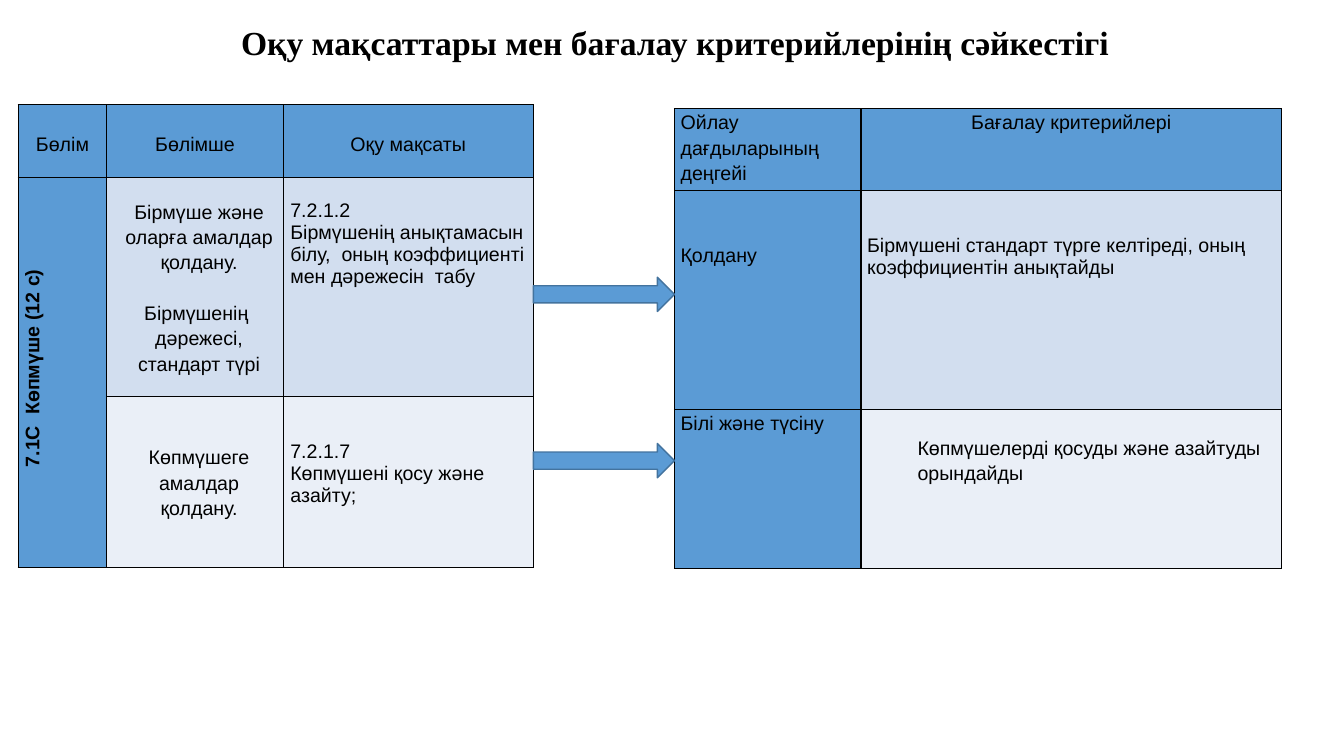
from dataclasses import dataclass

from lxml import etree
from pptx import Presentation
from pptx.dml.color import RGBColor
from pptx.enum.shapes import MSO_SHAPE
from pptx.enum.text import MSO_ANCHOR, PP_ALIGN
from pptx.oxml.ns import qn
from pptx.util import Inches, Pt

RIGHT_ARROW = MSO_SHAPE.RIGHT_ARROW
LEFT, CENTER = PP_ALIGN.LEFT, PP_ALIGN.CENTER
TOP, MIDDLE = MSO_ANCHOR.TOP, MSO_ANCHOR.MIDDLE


@dataclass(frozen=True)
class Theme:
    ink: str = "000000"
    accent: str = "5B9BD5"
    accent_edge: str = "43739E"
    band_dark: str = "D2DEEF"
    band_light: str = "EAEFF7"
    title_font: str = "Times New Roman"
    body_font: str = "Arial"
    title_size: int = 24
    body_size: int = 14
    line_width: int = 1


THEME = Theme()


def write(frame, text, font=THEME.body_font, size=THEME.body_size, bold=False,
          align=LEFT, spacing=1.0, gap=0, indent=0):
    """Fill a text frame, one paragraph per line; gap is the points between them."""
    frame.word_wrap = True
    for index, line in enumerate(text.split("\n")):
        paragraph = frame.paragraphs[0] if index == 0 else frame.add_paragraph()
        paragraph.alignment = align
        paragraph.line_spacing = spacing
        paragraph.space_before = Pt(gap if index else 0)
        if indent:
            properties = paragraph._p.get_or_add_pPr()
            properties.set("marL", str(Inches(indent)))
            properties.set("indent", "0")
        run = paragraph.add_run()
        run.text = line
        run.font.name = font
        run.font.size = Pt(size)
        run.font.bold = bold
        run.font.color.rgb = RGBColor.from_string(THEME.ink)


class SlideBuilder:
    def __init__(self, slide, theme):
        self.slide = slide
        self.theme = theme

    def title(self, text, left, top, width, height):
        box = self.slide.shapes.add_textbox(*map(Inches, (left, top, width, height)))
        box.text_frame.vertical_anchor = MIDDLE
        write(box.text_frame, text, font=self.theme.title_font,
              size=self.theme.title_size, bold=True, align=CENTER, spacing=0.9)

    def table(self, left, top, widths, heights, inset):
        """Add an unstyled bordered table with accent headings and banded rows."""
        frame = self.slide.shapes.add_table(
            len(heights), len(widths), Inches(left), Inches(top),
            Inches(sum(widths)), Inches(sum(heights)))
        grid = frame.table
        grid.first_row = grid.horz_banding = False
        for column, width in zip(grid.columns, widths):
            column.width = Inches(width)
        bands = (self.theme.accent, self.theme.band_dark, self.theme.band_light)
        for row, (height, band) in enumerate(zip(heights, bands)):
            grid.rows[row].height = Inches(height)
            for column in range(len(widths)):
                cell = grid.cell(row, column)
                cell.margin_left = cell.margin_right = Inches(inset)
                cell.margin_top = cell.margin_bottom = 0
                cell.fill.solid()
                cell.fill.fore_color.rgb = RGBColor.from_string(
                    band if column else self.theme.accent)
                self.border(cell)
        return grid

    def border(self, cell):
        properties = cell._tc.get_or_add_tcPr()
        for position, side in enumerate(("a:lnL", "a:lnR", "a:lnT", "a:lnB")):
            line = etree.Element(qn(side), w=str(Pt(self.theme.line_width)))
            fill = etree.SubElement(line, qn("a:solidFill"))
            etree.SubElement(fill, qn("a:srgbClr"), val=self.theme.ink)
            properties.insert(position, line)

    def cell(self, grid, row, column, text, drop=0, anchor=TOP, **text_format):
        """Write a cell; drop is the space in inches above its text."""
        cell = grid.cell(row, column)
        cell.margin_top = Inches(drop)
        cell.vertical_anchor = anchor
        write(cell.text_frame, text, **text_format)
        return cell

    def arrow(self, left, top, width, height):
        arrow = self.slide.shapes.add_shape(
            RIGHT_ARROW, *map(Inches, (left, top, width, height)))
        arrow.shadow.inherit = False
        arrow.fill.solid()
        arrow.fill.fore_color.rgb = RGBColor.from_string(self.theme.accent)
        arrow.line.color.rgb = RGBColor.from_string(self.theme.accent_edge)
        arrow.line.width = Pt(self.theme.line_width)


def add_goals(builder):
    goals = builder.table(0.18, 1.04, (0.88, 1.75, 2.48), (0.72, 2.17, 1.7), 0.07)
    for column, heading in enumerate(("Бөлім", "Бөлімше", "Оқу мақсаты")):
        builder.cell(goals, 0, column, heading, drop=0.25, align=CENTER, spacing=1.15)

    centred = dict(anchor=MIDDLE, align=CENTER, spacing=1.15, indent=0.08)
    goals.cell(1, 0).merge(goals.cell(2, 0))
    section = builder.cell(goals, 1, 0, "7.1С  Көпмүше (12 с)", bold=True, **centred)
    section._tc.get_or_add_tcPr().set("vert", "vert270")

    builder.cell(goals, 1, 1, "Бірмүше және оларға амалдар қолдану.\n"
                 "Бірмүшенің  дәрежесі, стандарт түрі", gap=18, **centred)
    builder.cell(goals, 2, 1, "Көпмүшеге амалдар қолдану.", **centred)
    builder.cell(goals, 1, 2, "7.2.1.2\nБірмүшенің анықтамасын білу,  оның "
                 "коэффициенті мен дәрежесін  табу", drop=0.22)
    builder.cell(goals, 2, 2, "7.2.1.7\nКөпмүшені қосу және азайту;", drop=0.44)


def add_criteria(builder):
    criteria = builder.table(6.69, 1.08, (1.85, 4.17), (0.81, 2.17, 1.58), 0.06)
    levels = (("Ойлау дағдыларының деңгейі", 0), ("Қолдану", 0.5),
              ("Білі және түсіну", 0))
    for row, (level, drop) in enumerate(levels):
        builder.cell(criteria, row, 0, level, drop=drop, spacing=1.15)
    builder.cell(criteria, 0, 1, "Бағалау критерийлері", align=CENTER, spacing=1.15)
    builder.cell(criteria, 1, 1, "Бірмүшені стандарт түрге келтіреді, оның "
                 "коэффициентін анықтайды", drop=0.44)
    builder.cell(criteria, 2, 1, "Көпмүшелерді қосуды және азайтуды орындайды",
                 drop=0.25, spacing=1.15, indent=0.5)


def main():
    presentation = Presentation()
    presentation.slide_width = Inches(13.33)
    presentation.slide_height = Inches(7.5)
    slide = presentation.slides.add_slide(presentation.slide_layouts[6])
    builder = SlideBuilder(slide, THEME)

    builder.title("Оқу мақсаттары мен бағалау критерийлерінің сәйкестігі",
                  0.15, 0.22, 13.09, 0.45)
    add_goals(builder)
    add_criteria(builder)
    for arrow_top in (2.75, 4.4):
        builder.arrow(5.29, arrow_top, 1.4, 0.34)
    presentation.save("out.pptx")


if __name__ == "__main__":
    main()
